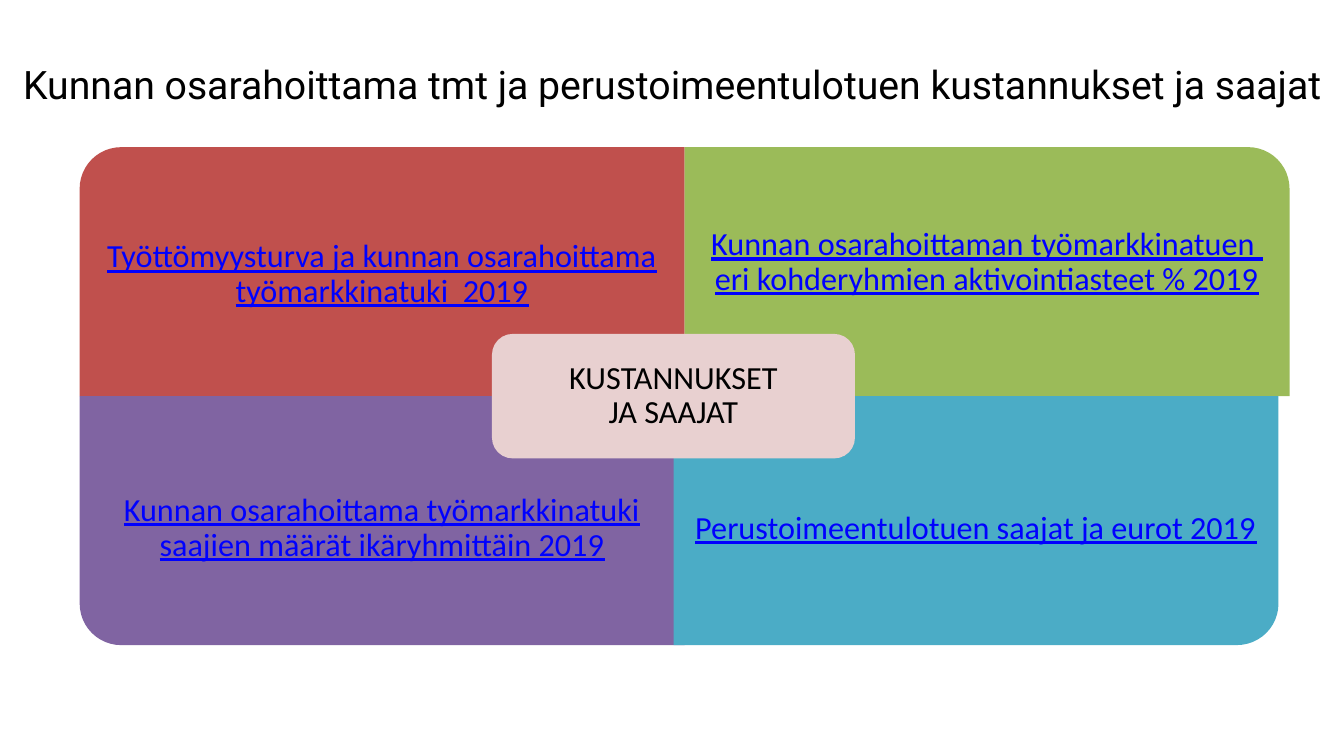
"""Build the slide on costs and recipients of labour market subsidy."""
from pptx import Presentation
from pptx import util as u
from pptx.dml.color import RGBColor
from pptx.enum import shapes, text

BLACK = RGBColor(0, 0, 0)
LINK = RGBColor(0, 0, 0xFF)
RED = RGBColor(0xC0, 0x50, 0x4D)
GREEN = RGBColor(0x9B, 0xBB, 0x59)
PURPLE = RGBColor(0x80, 0x64, 0xA2)
TEAL = RGBColor(0x4B, 0xAC, 0xC6)
PINK = RGBColor(0xE8, 0xD0, 0xD0)

TITLE = "Kunnan osarahoittama tmt ja perustoimeentulotuen kustannukset ja saajat"
CENTRE = "KUSTANNUKSET\nJA SAAJAT"
# column, row, nudge left, rotation, fill, top inset, bottom inset, wording
QUADRANTS = [
    (0, 0, 0, 270, RED, 0.86, 0.18,
     "Työttömyysturva ja kunnan osarahoittama\ntyömarkkinatuki  2019"),
    (1, 0, 0, 0, GREEN, 0.62, 0.18,
     "Kunnan osarahoittaman työmarkkinatuen \neri kohderyhmien aktivointiasteet % 2019"),
    (0, 1, 0, 180, PURPLE, 0.18, 0.64,
     "Kunnan osarahoittama työmarkkinatuki\nsaajien määrät ikäryhmittäin 2019"),
    (1, 1, 0.11, 90, TEAL, 0.18, 0.64,
     "Perustoimeentulotuen saajat ja eurot 2019"),
]

WIDTH, HEIGHT = 13.33, 7.5
LEFT, TOP, COL, ROW = 0.79, 1.46, 6, 2.47
LABEL = 0.75 * ROW
HUB_W, HUB_H, HUB_PAD = 0.6 * COL, 0.5 * ROW, 0.06

prs = Presentation()
prs.slide_width, prs.slide_height = u.Inches(WIDTH), u.Inches(HEIGHT)
s = prs.slides.add_slide(prs.slide_layouts[6])


def add_text(content, x, y, w, h, size=23, font="Calibri", color=BLACK,
             underline=False, insets=(0.1, 0.1, 0.1, 0.1), spacing=0.9):
    tf = s.shapes.add_textbox(*map(u.Inches, (x, y, w, h))).text_frame
    tf.word_wrap = True
    tf.vertical_anchor = text.MSO_ANCHOR.MIDDLE
    (tf.margin_left, tf.margin_top,
     tf.margin_right, tf.margin_bottom) = map(u.Inches, insets)
    p = tf.paragraphs[0]
    p.text = content
    p.alignment = text.PP_ALIGN.CENTER
    p.line_spacing = spacing
    for r in p.runs:
        r.font.size = u.Pt(size)
        r.font.name = font
        r.font.color.rgb = color
        r.font.underline = underline


def add_block(kind, x, y, w, h, fill, rotation=0):
    if rotation % 180:
        x, y, w, h = x + (w - h) / 2, y + (h - w) / 2, h, w
    sp = s.shapes.add_shape(kind, *map(u.Inches, (x, y, w, h)))
    sp.rotation = rotation
    sp.shadow.inherit = False
    sp.fill.solid()
    sp.fill.fore_color.rgb = fill
    sp.line.fill.background()


add_text(TITLE, 0, 0.21, WIDTH, 1.25, size=28, font="Roboto", spacing=1)

for col, row, nudge, rotation, fill, above, below, label in QUADRANTS:
    x, y = LEFT + col * COL - nudge, TOP + row * ROW
    add_block(shapes.MSO_SHAPE.ROUND_1_RECTANGLE, x, y, COL, ROW, fill, rotation)
    add_text(label, x, y + row * (ROW - LABEL), COL, LABEL, color=LINK,
             underline=True, insets=(0.18, above, 0.18, below))

hub_x, hub_y = LEFT + COL - nudge - HUB_W / 2, TOP + ROW - HUB_H / 2
add_block(shapes.MSO_SHAPE.ROUNDED_RECTANGLE, hub_x, hub_y, HUB_W, HUB_H, PINK)
add_text(CENTRE, hub_x + HUB_PAD, hub_y + HUB_PAD,
         HUB_W - 2 * HUB_PAD, HUB_H - 2 * HUB_PAD)

prs.save("out.pptx")
